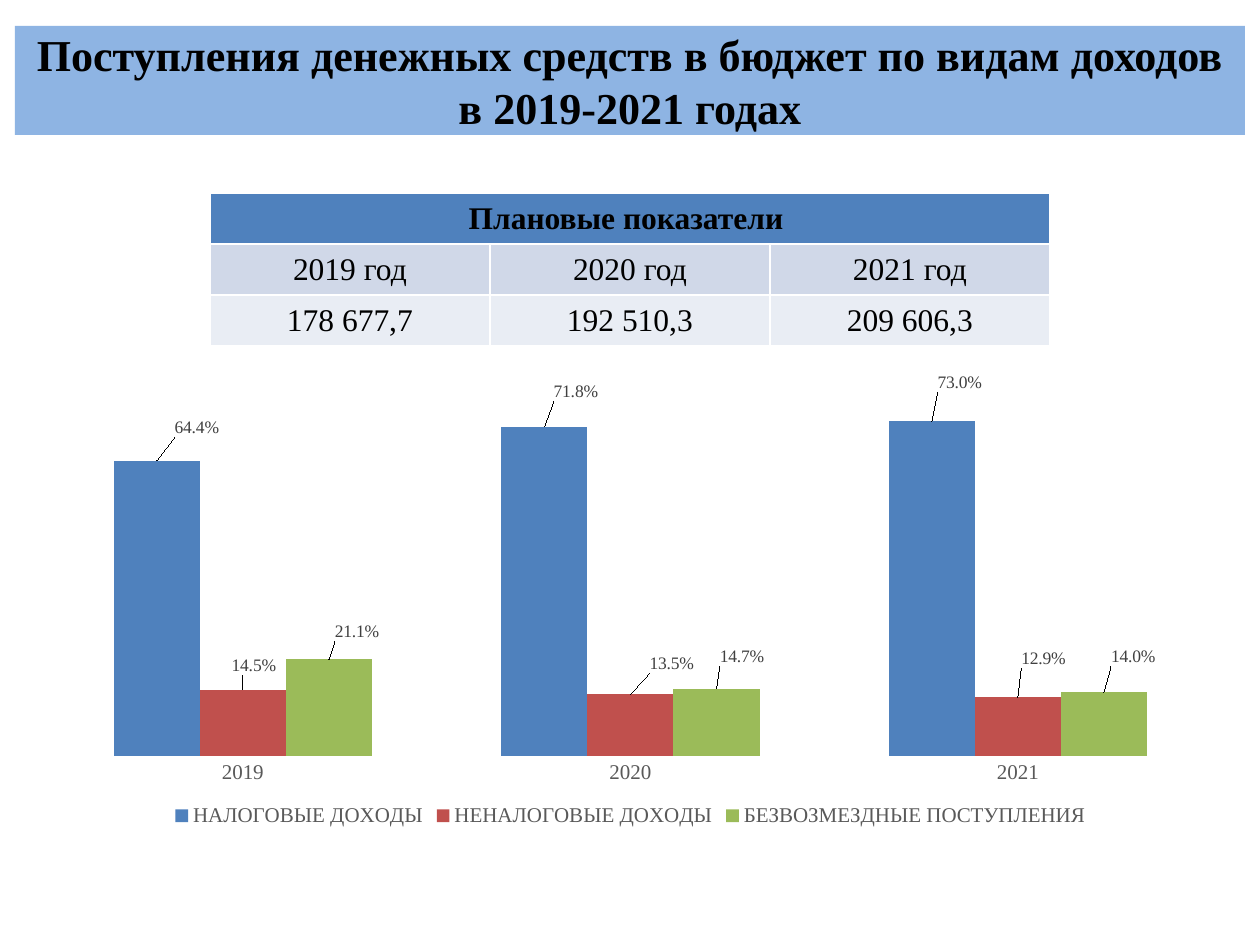
"""Builds a slide on budget receipts by kind of income, 2019-2021."""
import pptx
import pptx.chart.data
import pptx.dml.color
import pptx.enum.chart
import pptx.enum.text
import pptx.oxml
import pptx.oxml.ns
import pptx.util

EMU_PER_PX = 914400 / 126
SERIF = "Times New Roman"
YEARS = ["2019", "2020", "2021"]
PLAN = ["178 677,7", "192 510,3", "209 606,3"]
INCOME = [
    ("НАЛОГОВЫЕ ДОХОДЫ", "4F81BD", [0.644, 0.718, 0.730], [(40, -19), (32, -20), (28, -24)]),
    ("НЕНАЛОГОВЫЕ ДОХОДЫ", "C0504D", [0.145, 0.135, 0.129], [(11, -9), (41, -16), (26, -24)]),
    ("БЕЗВОЗМЕЗДНЫЕ ПОСТУПЛЕНИЯ", "9BBB59", [0.211, 0.147, 0.140], [(28, -13), (25, -18), (29, -20)]),
]
CHART_BOX = (25, 373, 1211, 459)


def px(length):
    return pptx.util.Emu(round(length * EMU_PER_PX))


def rgb(code):
    return pptx.dml.color.RGBColor.from_string(code)


def paint(target, code):
    target.fill.solid()
    target.fill.fore_color.rgb = rgb(code)


def set_font(font, size, code, bold=False):
    font.name = SERIF
    font.size = pptx.util.Pt(size)
    font.bold = bold
    font.color.rgb = rgb(code)


def add_run(paragraph, text, size, bold=False):
    run = paragraph.add_run()
    run.text = text
    set_font(run.font, size, "000000", bold)


def manual_layout(x, y, size=None):
    """Return a c:layout element; with a size it fixes the inner plot area."""
    fields = [("x", x), ("y", y)]
    if size:
        fields = [("layoutTarget", "inner"), ("xMode", "edge"), ("yMode", "edge"),
                  *fields, ("w", size[0]), ("h", size[1])]
    body = "".join(f'<c:{name} val="{value}"/>' for name, value in fields)
    return pptx.oxml.parse_xml(
        f'<c:layout {pptx.oxml.ns.nsdecls("c")}><c:manualLayout>{body}</c:manualLayout></c:layout>')


def fill_title(slide):
    title = slide.shapes.title
    title.left, title.top, title.width, title.height = map(px, (15, 26, 1230, 109))
    paint(title, "8EB4E3")
    frame = title.text_frame
    frame.word_wrap = True
    frame.vertical_anchor = pptx.enum.text.MSO_ANCHOR.MIDDLE
    heading = frame.paragraphs[0]
    heading.alignment = pptx.enum.text.PP_ALIGN.CENTER
    add_run(heading, "Поступления денежных средств в бюджет по видам доходов", 25.2, True)
    heading.add_line_break()
    add_run(heading, "в 2019-2021 годах", 25.2, True)


def fill_cell(cell, text, code, bold=False):
    paint(cell, code)
    cell.margin_left = cell.margin_right = cell.margin_top = px(1)
    cell.margin_bottom = 0
    cell.vertical_anchor = pptx.enum.text.MSO_ANCHOR.MIDDLE
    paragraph = cell.text_frame.paragraphs[0]
    paragraph.alignment = pptx.enum.text.PP_ALIGN.CENTER
    add_run(paragraph, text, 18, bold)


def add_plan_table(slide):
    plan = slide.shapes.add_table(3, 3, *map(px, (210, 193, 840, 153))).table
    plan.cell(0, 0).merge(plan.cell(0, 2))
    fill_cell(plan.cell(0, 0), "Плановые показатели ", "4F81BD", True)
    for column, (year, amount) in enumerate(zip(YEARS, PLAN)):
        fill_cell(plan.cell(1, column), f"{year} год", "D0D8E8")
        fill_cell(plan.cell(2, column), amount, "E9EDF4")


def label_series(series, offsets):
    """Show each value above its column, shifted by its offset in px."""
    for index, (dx, dy) in enumerate(offsets):
        label = series.points[index].data_label
        set_font(label.font, 10, "404040")
        label.position = pptx.enum.chart.XL_LABEL_POSITION.OUTSIDE_END
        element = series._element.xpath(f"c:dLbls/c:dLbl[c:idx/@val='{index}']")[0]
        shift = manual_layout(round(dx / CHART_BOX[2], 3), round(dy / CHART_BOX[3], 3))
        element.insert(1, shift)
    labels = series.data_labels
    labels.show_value = True
    labels.number_format = "0.0%"
    labels.number_format_is_linked = False
    set_font(labels.font, 10, "404040")


def format_axes(chart):
    years = chart.category_axis
    years.major_tick_mark = pptx.enum.chart.XL_TICK_MARK.NONE
    years.format.line.fill.background()
    set_font(years.tick_labels.font, 12, "595959")
    shares = chart.value_axis
    shares.visible = False
    shares.has_major_gridlines = False
    shares.minimum_scale, shares.maximum_scale = 0, 0.8
    shares.tick_labels.number_format = "0.0%"
    shares.tick_labels.number_format_is_linked = False


def add_income_chart(slide):
    data = pptx.chart.data.CategoryChartData(number_format="0.0%")
    data.categories = YEARS
    for name, _, shares, _ in INCOME:
        data.add_series(name, shares)
    chart = slide.shapes.add_chart(
        pptx.enum.chart.XL_CHART_TYPE.COLUMN_CLUSTERED, *map(px, CHART_BOX), data).chart
    chart.has_title = False
    chart.font.name = "Calibri"
    chart.font.size = pptx.util.Pt(10)
    chart.font.color.rgb = rgb("000000")
    chart.has_legend = True
    chart.legend.position = pptx.enum.chart.XL_LEGEND_POSITION.BOTTOM
    chart.legend.include_in_layout = False
    set_font(chart.legend.font, 12, "595959")
    format_axes(chart)
    plot = chart.plots[0]
    plot.gap_width, plot.overlap = 150, 0
    plot.vary_by_categories = False
    for series, (_, code, _, offsets) in zip(plot.series, INCOME):
        paint(series.format, code)
        series.invert_if_negative = False
        label_series(series, offsets)
    plot_area = chart._chartSpace.chart.plotArea
    for automatic in plot_area.xpath("c:layout"):
        plot_area.remove(automatic)
    plot_area.insert(0, manual_layout(0.02, 0.035, (0.96, 0.8)))


def main():
    deck = pptx.Presentation()
    deck.slide_width, deck.slide_height = px(1260), px(945)
    slide = deck.slides.add_slide(deck.slide_layouts[0])
    subtitle = slide.placeholders[1].element
    subtitle.getparent().remove(subtitle)
    fill_title(slide)
    add_plan_table(slide)
    add_income_chart(slide)
    deck.save("out.pptx")


if __name__ == "__main__":
    main()
